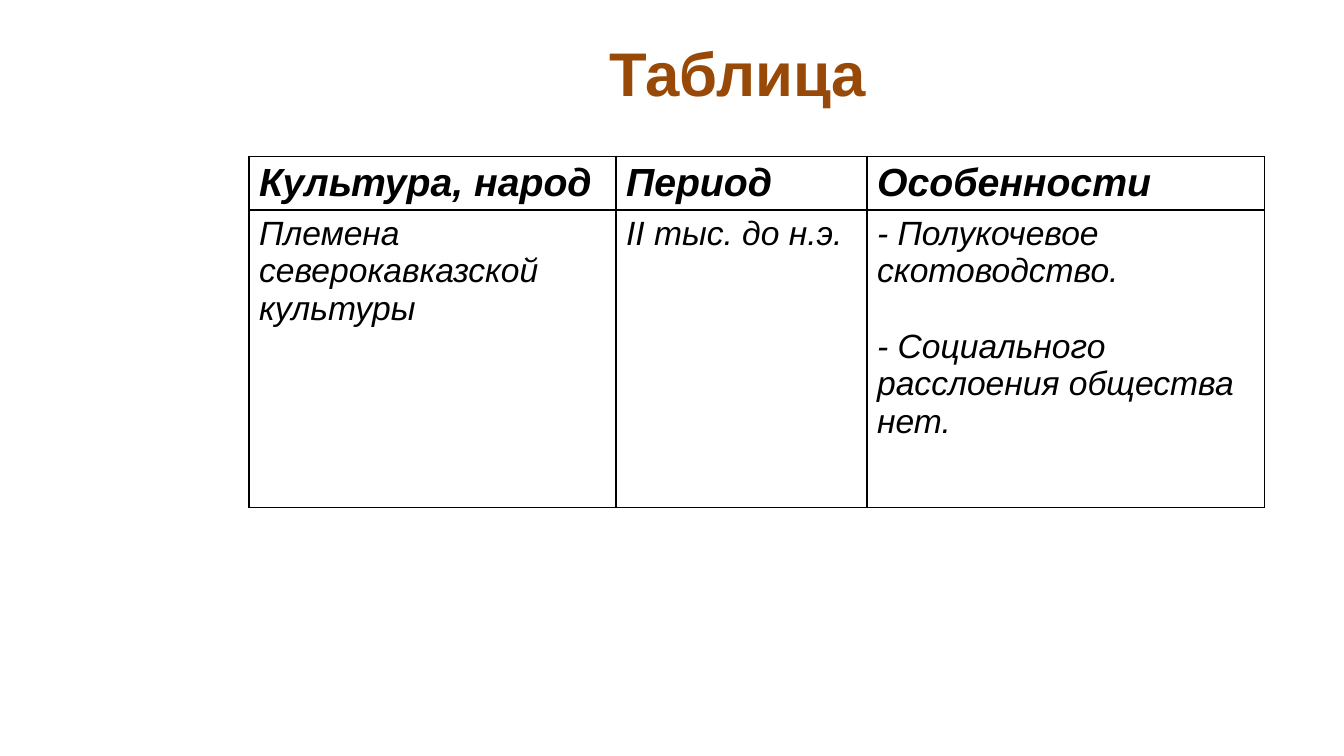
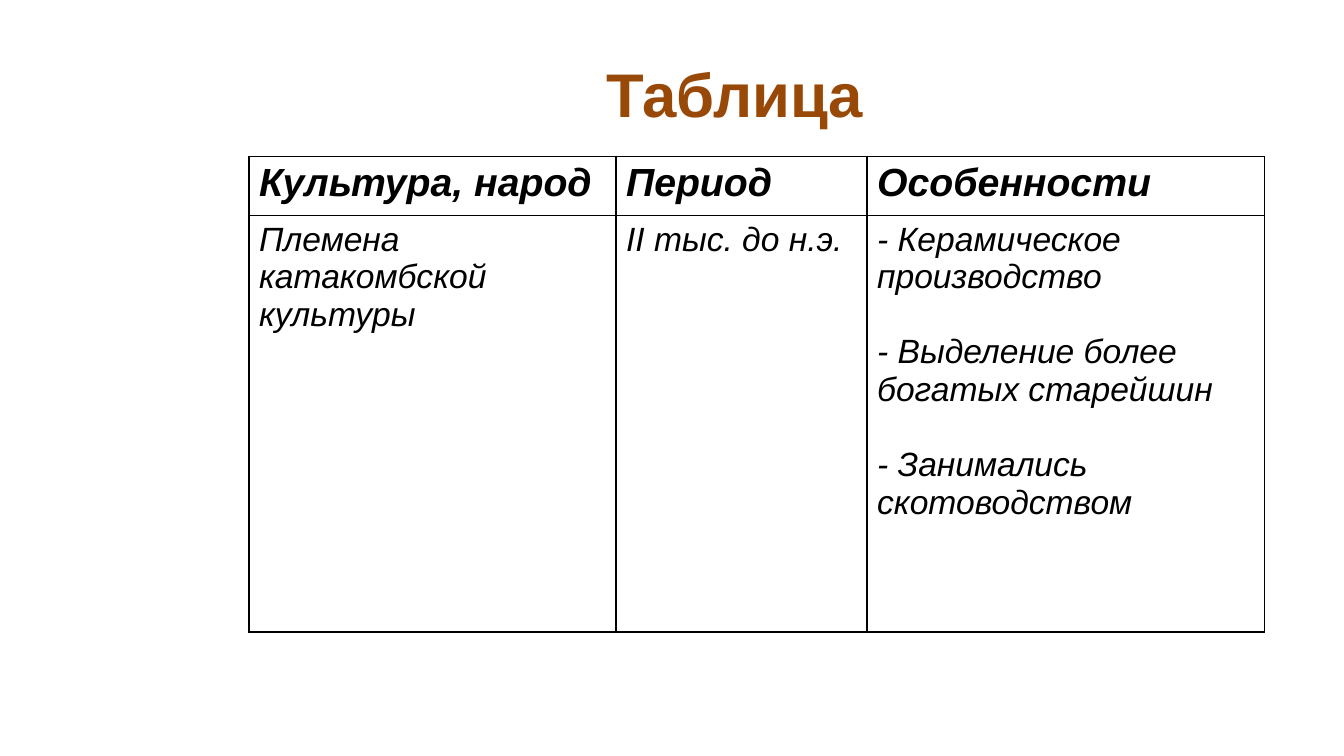
from dataclasses import dataclass

from lxml import etree
from pptx import Presentation
from pptx.dml.color import RGBColor
from pptx.enum.text import MSO_ANCHOR, MSO_AUTO_SIZE, PP_ALIGN
from pptx.oxml.ns import qn
from pptx.util import Inches, Pt

CENTER = PP_ALIGN.CENTER
MIDDLE = MSO_ANCHOR.MIDDLE
NO_FIT = MSO_AUTO_SIZE.NONE


@dataclass(frozen=True)
class Theme:
    font: str = "Arial"
    brown: str = "984807"
    black: str = "000000"
    white: str = "FFFFFF"
    title: int = 44
    head: int = 28
    body: int = 24
    gap: int = 27
    line: int = 1


theme = Theme()


def style(par, size, color, bold, italic):
    font = par.font
    font.name = theme.font
    font.size = Pt(size)
    font.bold = bold
    font.italic = italic
    font.color.rgb = RGBColor.from_string(color)


def border(cell):
    props = cell._tc.get_or_add_tcPr()
    for side in ("a:lnL", "a:lnR", "a:lnT", "a:lnB"):
        line = etree.SubElement(props, qn(side), w=str(Pt(theme.line)))
        fill = etree.SubElement(line, qn("a:solidFill"))
        etree.SubElement(fill, qn("a:srgbClr"), val=theme.black)


HEADS = ["Культура, народ", "Период", "Особенности"]
WIDTHS = [3.64, 2.49, 3.94]
ERA = "II тыс. до н.э."

PAGES = [
    {
        "title": (1.8, 0.09),
        "rows": (0.53, 2.95),
        "tribe": "Племена северокавказской культуры",
        "traits": [
            "- Полукочевое скотоводство.",
            "- Социального расслоения общества нет.",
        ],
    },
    {
        "title": (1.77, 0.3),
        "rows": (0.59, 4.13),
        "tribe": "Племена катакомбской культуры",
        "traits": [
            "- Керамическое производство",
            "- Выделение более богатых старейшин",
            "- Занимались скотоводством",
        ],
    },
]

deck = Presentation()
deck.slide_width = Inches(13.33)
deck.slide_height = Inches(7.5)
layout = deck.slide_layouts.get_by_name("Title Only")

for page in PAGES:
    slide = deck.slides.add_slide(layout)
    title = slide.shapes.title
    left, top = page["title"]
    title.left, title.top = Inches(left), Inches(top)
    title.width, title.height = Inches(11.04), Inches(1.25)
    frame = title.text_frame
    frame.text = "Таблица"
    frame.auto_size = NO_FIT
    frame.vertical_anchor = MIDDLE
    frame.paragraphs[0].alignment = CENTER
    style(frame.paragraphs[0], theme.title, theme.brown, True, False)

    table = slide.shapes.add_table(
        2, len(HEADS), Inches(2.47), Inches(1.55),
        Inches(sum(WIDTHS)), Inches(sum(page["rows"])),
    ).table
    table.horz_banding = False
    for column, width in zip(table.columns, WIDTHS):
        column.width = Inches(width)
    for row, height in zip(table.rows, page["rows"]):
        row.height = Inches(height)

    body = [page["tribe"], ERA, "\n".join(page["traits"])]
    for index, texts in enumerate((HEADS, body)):
        is_head = index == 0
        size = theme.head if is_head else theme.body
        for cell, text in zip(table.rows[index].cells, texts):
            border(cell)
            cell.fill.solid()
            cell.fill.fore_color.rgb = RGBColor.from_string(theme.white)
            cell.text = text
            for order, par in enumerate(cell.text_frame.paragraphs):
                style(par, size, theme.black, is_head, True)
                if order:
                    par.space_before = Pt(theme.gap)

deck.save("out.pptx")
